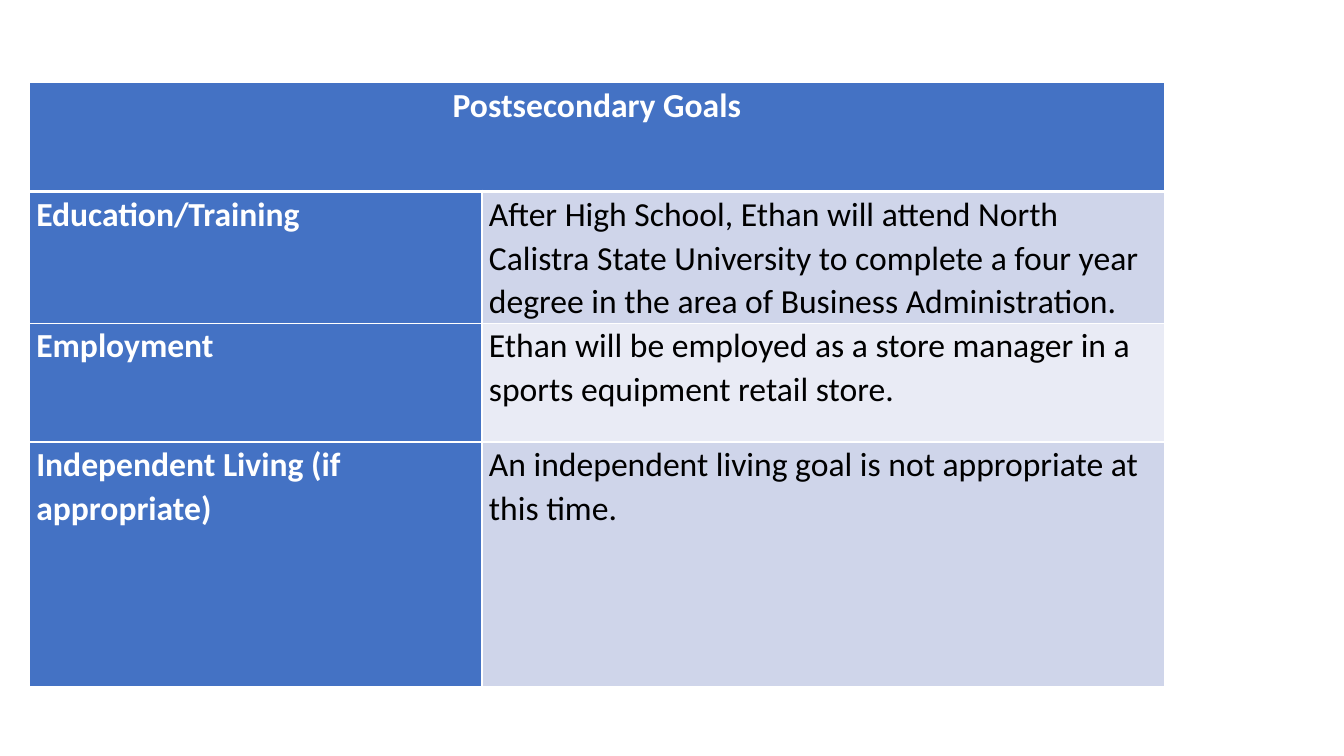
import pptx
import pptx.dml.color
import pptx.enum.text
import pptx.oxml
import pptx.oxml.ns
import pptx.util

Inches = pptx.util.Inches
Pt = pptx.util.Pt
RGBColor = pptx.dml.color.RGBColor
ALIGN = pptx.enum.text.PP_ALIGN

WHITE = RGBColor(0xFF, 0xFF, 0xFF)
BLACK = RGBColor(0, 0, 0)
BLUE = RGBColor(0x44, 0x72, 0xC4)
BANDS = (RGBColor(0xCF, 0xD5, 0xEA), RGBColor(0xE9, 0xEB, 0xF5))

TITLE = "Postsecondary Goals"
GOALS = (
    ("Education/Training",
     "After High School, Ethan will attend North Calistra State University "
     "to complete a four year degree in the area of Business Administration."),
    ("Employment",
     "Ethan will be employed as a store manager in a sports equipment retail store."),
    ("Independent Living (if appropriate)",
     "An independent living goal is not appropriate at this time."),
)
COLUMN_WIDTHS = (4.49, 6.77)
ROW_HEIGHTS = (1.08, 1.18, 1.18, 2.43)
HEADING = {"size": Pt(24), "name": "Calibri", "bold": True}
BODY = {**HEADING, "bold": False}
MARGINS = {"margin_left": Inches(0.07), "margin_right": Inches(0.07),
           "margin_top": 0, "margin_bottom": 0}


def set_attributes(target, values):
    for name, value in values.items():
        setattr(target, name, value)


def add_borders(cell, widths):
    """Draw white borders; widths maps the sides L, R, T and B to points."""
    properties = cell._tc.get_or_add_tcPr()
    for side, width in widths.items():
        properties.append(pptx.oxml.parse_xml(
            f'<a:ln{side} {pptx.oxml.ns.nsdecls("a")} w="{Pt(width)}">'
            f'<a:solidFill><a:srgbClr val="{WHITE}"/></a:solidFill></a:ln{side}>'))


def fill_cell(cell, text, font, color, background, align=ALIGN.LEFT, top=1, bottom=1):
    set_attributes(cell, MARGINS)
    add_borders(cell, {"L": 1, "R": 1, "T": top, "B": bottom})
    cell.fill.solid()
    cell.fill.fore_color.rgb = background
    paragraph = cell.text_frame.paragraphs[0]
    set_attributes(paragraph, {"alignment": align, "line_spacing": 1.07})
    run = paragraph.add_run()
    run.text = text
    set_attributes(run.font, font)
    run.font.color.rgb = color


def add_goals_table(slide, left, top):
    frame = slide.shapes.add_table(
        len(ROW_HEIGHTS), len(COLUMN_WIDTHS), Inches(left), Inches(top),
        Inches(sum(COLUMN_WIDTHS)), Inches(sum(ROW_HEIGHTS)))
    table = frame.table
    for column, width in zip(table.columns, COLUMN_WIDTHS):
        column.width = Inches(width)
    for row, height in zip(table.rows, ROW_HEIGHTS):
        row.height = Inches(height)

    table.cell(0, 0).merge(table.cell(0, 1))
    fill_cell(table.cell(0, 0), TITLE, HEADING, WHITE, BLUE, ALIGN.CENTER, bottom=3)
    add_borders(table.cell(0, 1), {"R": 1, "T": 1, "B": 3})
    for index, (area, goal) in enumerate(GOALS):
        top_width = 3 if index == 0 else 1
        fill_cell(table.cell(index + 1, 0), area, HEADING, WHITE, BLUE, top=top_width)
        fill_cell(table.cell(index + 1, 1), goal, BODY, BLACK,
                  BANDS[index % len(BANDS)], top=top_width)


def main():
    presentation = pptx.Presentation()
    presentation.slide_width = Inches(13.33)
    presentation.slide_height = Inches(7.5)
    slide = presentation.slides.add_slide(presentation.slide_layouts[6])
    add_goals_table(slide, 0.29, 0.82)
    presentation.save("out.pptx")


if __name__ == "__main__":
    main()
